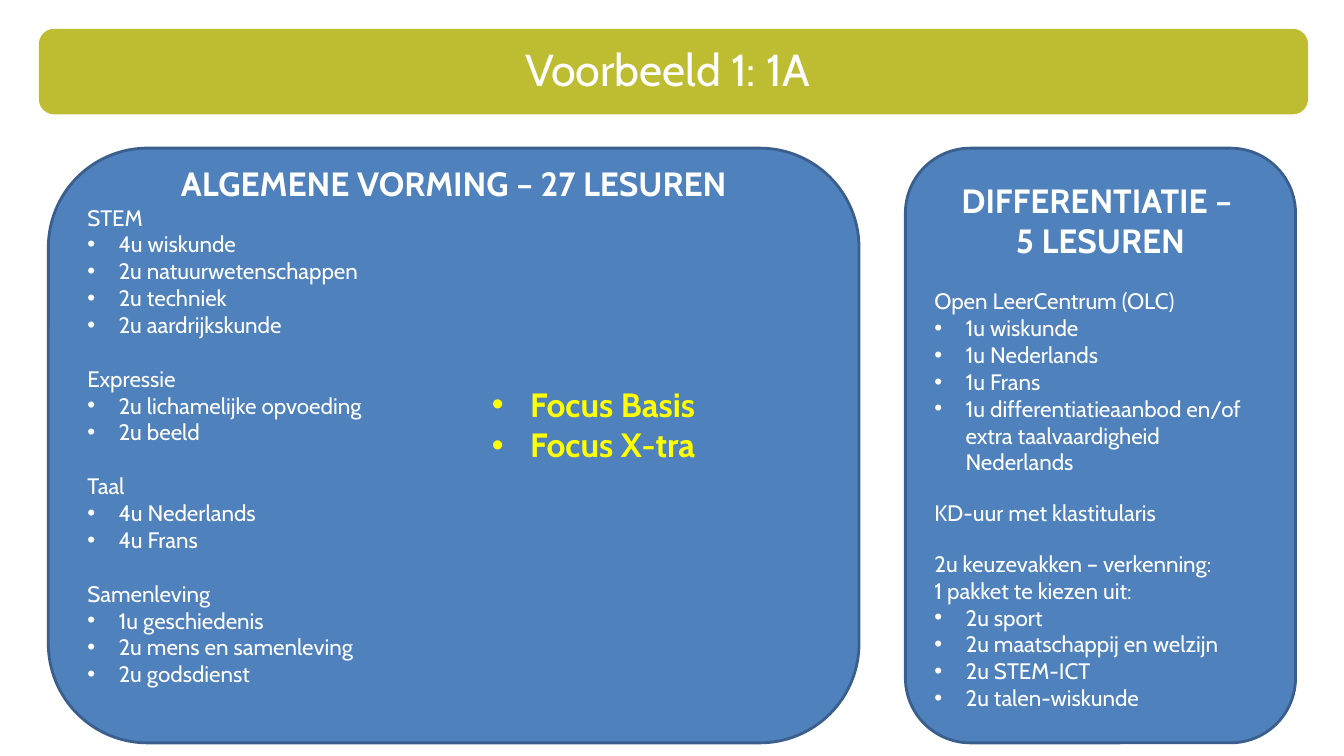
"""Build the slide with the example timetable for class 1A."""
from dataclasses import dataclass

from lxml.etree import SubElement
from pptx import Presentation
from pptx.dml.color import RGBColor
from pptx.enum.shapes import MSO_SHAPE as Preset
from pptx.enum.text import MSO_ANCHOR as Anchor, MSO_AUTO_SIZE as AutoSize, PP_ALIGN as Align
from pptx.oxml.ns import qn
from pptx.util import Inches, Pt

FONT = "Cabin"
COLORS = {"bar": "BEBD31", "panel": "4F81BD", "border": "3A5F8C",
          "text": "FFFFFF", "focus": "FFFF00"}


@dataclass
class Line:
    """One paragraph; indent in inches makes it a bullet, gap is in points."""
    text: str
    size: int = 16
    bold: bool = False
    indent: float = 0
    gap: float = 0
    align: Align = Align.LEFT
    color: str = "text"


@dataclass
class Box:
    """A rounded panel or bar, measured in inches."""
    left: float
    top: float
    width: float
    height: float
    fill: str
    border: str
    bottom_inset: float = 0.05


def heading(text):
    """Return a centred panel heading."""
    return Line(text, size=24, bold=True, align=Align.CENTER)


def group(intro, *items, gap=0):
    """Return an intro line followed by its bulleted items."""
    return [Line(intro, gap=gap)] + [Line(item, indent=0.31) for item in items]


def color(key):
    """Look up a colour by its role."""
    return RGBColor.from_string(COLORS[key])


def write(frame, lines):
    """Fill a text frame with formatted lines."""
    frame.word_wrap = True
    frame.text = "\n".join(line.text for line in lines)
    for paragraph, line in zip(frame.paragraphs, lines):
        paragraph.alignment = line.align
        paragraph.space_before = Pt(line.gap)
        if line.indent:
            properties = paragraph._p.get_or_add_pPr()
            properties.set("marL", str(Inches(line.indent)))
            properties.set("indent", str(-Inches(line.indent)))
            SubElement(properties, qn("a:buFont")).set("typeface", "Arial")
            SubElement(properties, qn("a:buChar")).set("char", "•")
        for run in paragraph.runs:
            run.font.name = FONT
            run.font.size = Pt(line.size)
            run.font.bold = line.bold
            run.font.color.rgb = color(line.color)


def draw_box(slide, box, lines=()):
    """Draw a rounded box with optional text and return it."""
    shape = slide.shapes.add_shape(
        Preset.ROUNDED_RECTANGLE,
        *map(Inches, (box.left, box.top, box.width, box.height)))
    shape.shadow.inherit = False
    shape.fill.solid()
    shape.fill.fore_color.rgb = color(box.fill)
    shape.line.color.rgb = color(box.border)
    shape.line.width = Pt(2)
    if lines:
        frame = shape.text_frame
        frame.vertical_anchor = Anchor.MIDDLE
        frame.margin_bottom = Inches(box.bottom_inset)
        write(frame, lines)
    return shape


GENERAL = [
    heading("ALGEMENE VORMING – 27 LESUREN"),
    *group("STEM", "4u wiskunde", "2u natuurwetenschappen", "2u techniek",
           "2u aardrijkskunde"),
    *group("Expressie", "2u lichamelijke opvoeding", "2u beeld", gap=19.2),
    *group("Taal", "4u Nederlands", "4u Frans", gap=19.2),
    *group("Samenleving", "1u geschiedenis", "2u mens en samenleving",
           "2u godsdienst", gap=19.2),
]
DIFFERENTIATION = [
    heading("DIFFERENTIATIE – "),
    heading("5 LESUREN"),
    *group("Open LeerCentrum (OLC)", "1u wiskunde", "1u Nederlands", "1u Frans",
           "1u differentiatieaanbod en/of extra taalvaardigheid Nederlands", gap=19.2),
    *group("KD-uur met klastitularis", gap=17),
    *group("2u keuzevakken – verkenning:", gap=17),
    *group("1 pakket te kiezen uit:", "2u sport", "2u maatschappij en welzijn",
           "2u STEM-ICT", "2u talen-wiskunde"),
]
FOCUS = [Line(text, size=24, bold=True, indent=0.38, color="focus")
         for text in ("Focus Basis", "Focus X-tra")]


def main():
    """Build and save the slide."""
    deck = Presentation()
    deck.slide_width, deck.slide_height = Inches(13.33), Inches(7.5)
    slide = deck.slides.add_slide(deck.slide_layouts[5])

    title = slide.shapes.title
    title.left, title.top, title.width, title.height = map(Inches, (0.67, 0.34, 12, 0.69))
    title.text_frame.auto_size = AutoSize.NONE
    title.text_frame.vertical_anchor = Anchor.MIDDLE
    write(title.text_frame, [Line("Voorbeeld 1: 1A ", size=32, align=Align.CENTER)])

    title_bar = draw_box(slide, Box(0.4, 0.3, 12.56, 0.82, "bar", "bar"))
    title.element.addprevious(title_bar.element)

    draw_box(slide, Box(0.48, 1.47, 8.04, 5.9, "panel", "border", 0.45), GENERAL)
    draw_box(slide, Box(8.98, 1.47, 3.87, 5.9, "panel", "border"), DIFFERENTIATION)

    focus = slide.shapes.add_textbox(*map(Inches, (4.78, 3.76, 3.13, 1.31)))
    write(focus.text_frame, FOCUS)
    deck.save("out.pptx")


if __name__ == "__main__":
    main()
